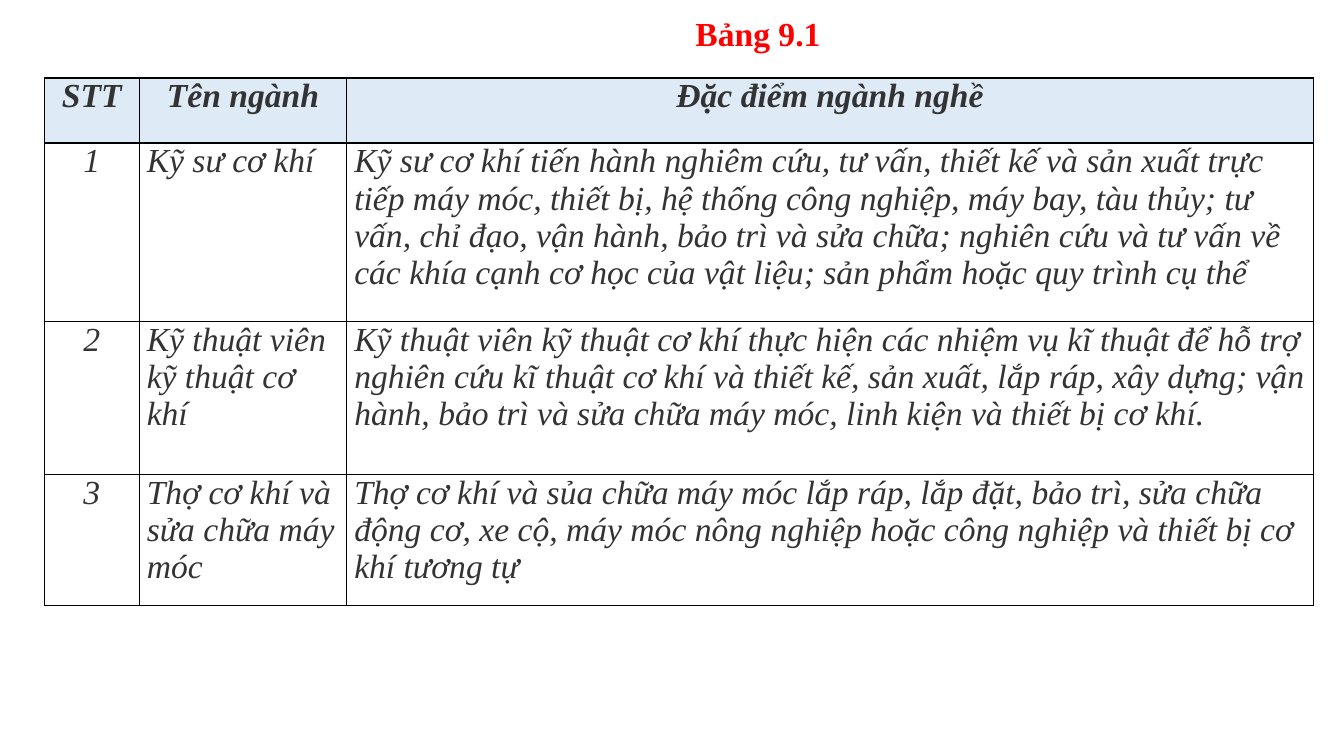
from dataclasses import dataclass

from lxml.etree import SubElement
from pptx import Presentation
from pptx.dml.color import RGBColor
from pptx.enum.text import MSO_AUTO_SIZE, PP_ALIGN
from pptx.oxml.ns import qn
from pptx.slide import Slide
from pptx.table import _Cell
from pptx.text.text import _Paragraph
from pptx.util import Pt

RED = RGBColor(0xFF, 0x00, 0x00)
DARK_GREY = RGBColor(0x33, 0x33, 0x33)
PALE_BLUE = RGBColor(0xDE, 0xEB, 0xF7)
BLACK = RGBColor(0x00, 0x00, 0x00)

FONT_NAME = "Times New Roman"
FONT_SIZE = 24
BORDER_WIDTH = 1
SIDE_MARGIN = 5.4
COLUMN_WIDTHS = (67.8, 148.2, 690.4)
TABLE_LEFT, TABLE_TOP = 31.7, 55.7


@dataclass(frozen=True)
class Row:
    number: str
    trade: str
    description: str
    height: float
    is_header: bool = False


ROWS = (
    Row("STT", "Tên ngành", "Đặc điểm ngành nghề", 46.5, True),
    Row(
        "1",
        "Kỹ sư cơ khí",
        "Kỹ sư cơ khí tiến hành nghiêm cứu, tư vấn, thiết kế và sản xuất trực "
        "tiếp máy móc, thiết bị, hệ thống công nghiệp, máy bay, tàu thủy; tư "
        "vấn, chỉ đạo, vận hành, bảo trì và sửa chữa; nghiên cứu và tư vấn về "
        "các khía cạnh cơ học của vật liệu; sản phẩm hoặc quy trình cụ thể",
        127.2,
    ),
    Row(
        "2",
        "Kỹ thuật viên kỹ thuật cơ khí",
        "Kỹ thuật viên kỹ thuật cơ khí thực hiện các nhiệm vụ kĩ thuật để hỗ trợ "
        "nghiên cứu kĩ thuật cơ khí và thiết kế, sản xuất, lắp ráp, xây dựng; vận "
        "hành, bảo trì và sửa chữa máy móc, linh kiện và thiết bị cơ khí.",
        109.3,
    ),
    Row(
        "3",
        "Thợ cơ khí và sửa chữa máy móc",
        "Thợ cơ khí và sủa chữa máy móc lắp ráp, lắp đặt, bảo trì, sửa chữa "
        "động cơ, xe cộ, máy móc nông nghiệp hoặc công nghiệp và thiết bị cơ "
        "khí tương tự",
        93.6,
    ),
)


def style_paragraph(
    paragraph: _Paragraph, color: RGBColor, bold: bool, italic: bool, centered: bool
) -> None:
    paragraph.alignment = PP_ALIGN.CENTER if centered else PP_ALIGN.LEFT
    font = paragraph.font
    font.name = FONT_NAME
    font.size = Pt(FONT_SIZE)
    font.bold = bold
    font.italic = italic
    font.color.rgb = color


def add_borders(cell: _Cell) -> None:
    properties = cell._tc.get_or_add_tcPr()
    for side in ("a:lnL", "a:lnR", "a:lnT", "a:lnB"):
        border = SubElement(properties, qn(side), w=str(Pt(BORDER_WIDTH)))
        fill = SubElement(border, qn("a:solidFill"))
        SubElement(fill, qn("a:srgbClr"), val=str(BLACK))


def fill_cell(cell: _Cell, text: str, is_header: bool, centered: bool) -> None:
    cell.margin_left = cell.margin_right = Pt(SIDE_MARGIN)
    cell.margin_top = cell.margin_bottom = Pt(0)
    cell.text = text
    style_paragraph(
        cell.text_frame.paragraphs[0], DARK_GREY, is_header, True, centered
    )
    add_borders(cell)
    if is_header:
        cell.fill.solid()
        cell.fill.fore_color.rgb = PALE_BLUE
    else:
        cell.fill.background()


def add_title(slide: Slide) -> None:
    title = slide.shapes.add_textbox(Pt(432.7), Pt(5.8), Pt(217.4), Pt(36))
    frame = title.text_frame
    frame.word_wrap = True
    frame.auto_size = MSO_AUTO_SIZE.SHAPE_TO_FIT_TEXT
    frame.text = "Bảng 9.1"
    style_paragraph(frame.paragraphs[0], RED, True, False, True)


def add_trades_table(slide: Slide) -> None:
    trades = slide.shapes.add_table(
        len(ROWS),
        len(COLUMN_WIDTHS),
        Pt(TABLE_LEFT),
        Pt(TABLE_TOP),
        Pt(sum(COLUMN_WIDTHS)),
        Pt(sum(row.height for row in ROWS)),
    ).table
    trades.horz_banding = False
    for column, width in zip(trades.columns, COLUMN_WIDTHS):
        column.width = Pt(width)
    for row_index, row in enumerate(ROWS):
        trades.rows[row_index].height = Pt(row.height)
        for column_index, text in enumerate((row.number, row.trade, row.description)):
            centered = row.is_header or column_index == 0
            fill_cell(
                trades.cell(row_index, column_index), text, row.is_header, centered
            )


def main() -> None:
    presentation = Presentation()
    presentation.slide_width = Pt(960)
    presentation.slide_height = Pt(540)
    slide = presentation.slides.add_slide(presentation.slide_layouts[6])
    add_title(slide)
    add_trades_table(slide)
    presentation.save("out.pptx")


if __name__ == "__main__":
    main()
